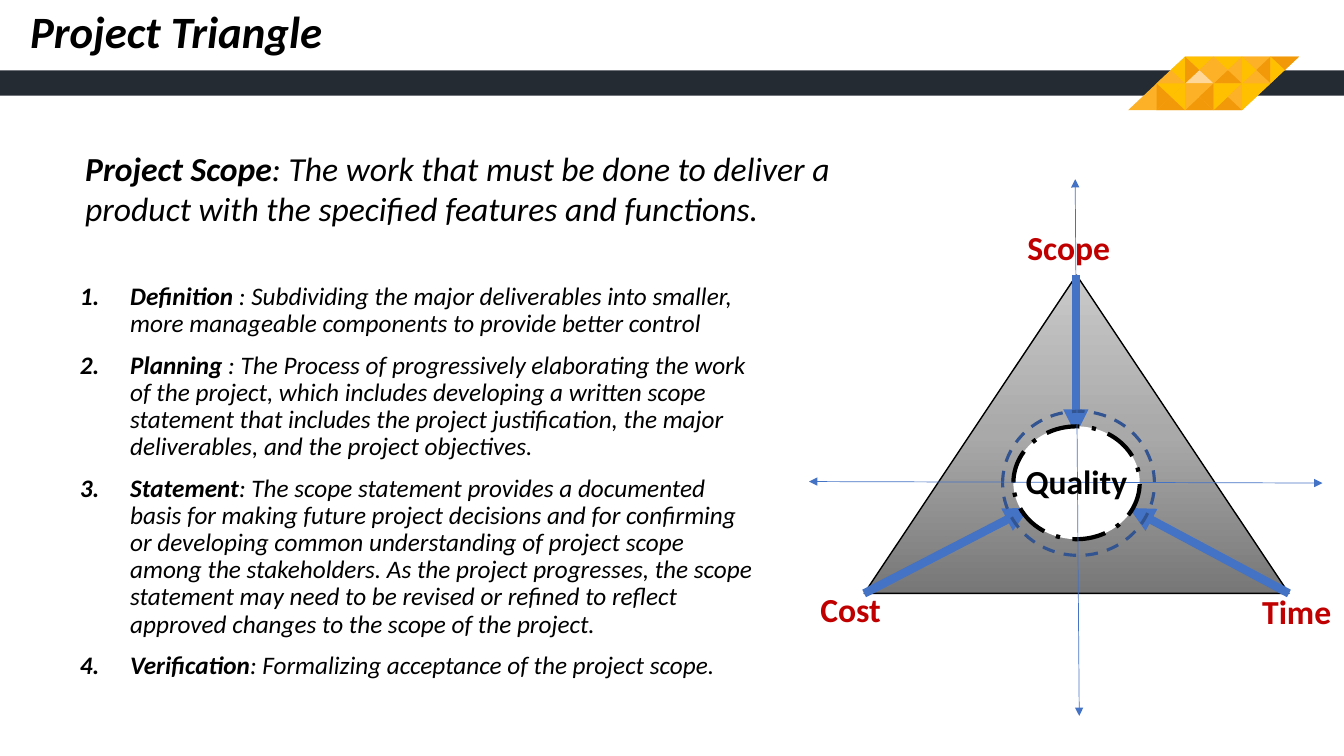
"""Build the Project Triangle slide: scope definitions beside a scope, cost and time triangle."""
from copy import deepcopy

from lxml import etree
from pptx import Presentation
from pptx.dml.color import RGBColor
from pptx.enum.dml import MSO_LINE
from pptx.enum.shapes import MSO_CONNECTOR, MSO_SHAPE
from pptx.enum.text import MSO_ANCHOR, MSO_AUTO_SIZE, PP_ALIGN
from pptx.oxml.ns import qn
from pptx.util import Inches, Pt

STRAIGHT = MSO_CONNECTOR.STRAIGHT
TRIANGLE, OVAL = MSO_SHAPE.ISOSCELES_TRIANGLE, MSO_SHAPE.OVAL
DASH, LONG_DASH_DOT = MSO_LINE.DASH, MSO_LINE.LONG_DASH_DOT
MIDDLE, CENTER, LEFT = MSO_ANCHOR.MIDDLE, PP_ALIGN.CENTER, PP_ALIGN.LEFT
FIT_SHAPE = MSO_AUTO_SIZE.SHAPE_TO_FIT_TEXT

THEME = {
    "font": "Calibri", "title": Pt(32), "lead": Pt(24), "body": Pt(18),
    "ink": RGBColor.from_string("000000"), "paper": RGBColor.from_string("FFFFFF"),
    "band": RGBColor.from_string("252B33"), "label": RGBColor.from_string("C00000"),
    "arrow": RGBColor.from_string("4472C4"), "ring": RGBColor.from_string("325491"),
    "greys": [RGBColor.from_string(grey) for grey in ("777777", "A9A9A9", "C9C9C9")],
    "Y": RGBColor.from_string("FFC000"), "A": RGBColor.from_string("FDB127"),
    "O": RGBColor.from_string("F2990A"), "P": RGBColor.from_string("FFD899"),
}

deck = Presentation()
deck.slide_width, deck.slide_height = Inches(13.33), Inches(7.5)
COL, ROW = deck.slide_width / 100, deck.slide_height / 100
slide = deck.slides.add_slide(deck.slide_layouts[6])
shapes = slide.shapes


def cells(*lengths):
    """Turn alternating column and row counts into slide lengths."""
    return [round(length * (ROW if i % 2 else COL)) for i, length in enumerate(lengths)]


def write(place, size, color, parts, italic=False, align=LEFT):
    """Add a text box whose first part is bold and return its frame."""
    frame = shapes.add_textbox(*cells(*place)).text_frame
    frame.word_wrap = True
    paragraph = frame.paragraphs[0]
    paragraph.alignment = align
    font = paragraph.font
    font.name, font.size, font.italic = THEME["font"], size, italic
    font.color.rgb = color
    for i, part in enumerate(parts):
        run = paragraph.add_run()
        run.text, run.font.bold = part, i == 0
    return frame


band = shapes.add_shape(MSO_SHAPE.RECTANGLE, *cells(0, 9.33, 100, 3.33))
band.shadow.inherit = False
band.fill.solid()
band.fill.fore_color.rgb = THEME["band"]
band.line.fill.background()

MOSAIC_ROWS = (("-YA-", "YAPO", "YAOA", "AOAY", "O--Y"),
               ("YYOO", "AOOA", "YAOY", "Y--Y"))
facets = [("A", [(2, 0), (-2, 4), (6, 4), (10, 0)])]
for row, tiles in enumerate(MOSAIC_ROWS):
    for column, tile in enumerate(tiles):
        x, y = 2 * column, 2 * row
        corners = [(x, y), (x + 2, y), (x + 2, y + 2), (x, y + 2)]
        for side, tone in enumerate(tile):
            if tone != "-":
                facets.append((tone, [corners[side], corners[(side + 1) % 4], (x + 1, y + 1)]))
for tone, outline in facets:
    points = [cells(86.05 + 1.06 * x, 7.5 + 1.77 * y) for x, y in outline]
    builder = shapes.build_freeform(*points[0])
    builder.add_line_segments(points[1:], close=True)
    facet = builder.convert_to_shape()
    facet.shadow.inherit = False
    facet.fill.solid()
    facet.fill.fore_color.rgb = THEME[tone]
    facet.line.fill.background()

title = write((1.5, 0, 86.27, 9.07), THEME["title"], THEME["ink"], ["Project Triangle"], True)
title.vertical_anchor = MIDDLE
title.paragraphs[0].line_spacing = 0.9

triangle = shapes.add_shape(TRIANGLE, *cells(64.3, 36.4, 31.6, 42.1))
triangle.shadow.inherit = False
triangle.fill.gradient()
triangle.fill.gradient_angle = 90
stop_list = triangle._element.spPr.find(".//" + qn("a:gsLst"))
stop_list.append(deepcopy(stop_list[0]))
for i, (stop, grey) in enumerate(zip(triangle.fill.gradient_stops, THEME["greys"])):
    stop.position, stop.color.rgb = i / 2, grey
triangle.line.color.rgb, triangle.line.width = THEME["ink"], Pt(1)

FORCES = [(80.05, 36.4, 80.05, 57.5), (64.3, 78.5, 76.6, 67.2), (95.9, 78.5, 84.02, 67.2)]
AXES = [(60.2, 63.7, 98.4, 63.9), (80, 23.7, 80.3, 94.7)]
RINGS = [((74.6, 54.4, 11.3, 19.07), None, "ring", 2.25, DASH),
         ((75.4, 56.4, 9.4, 14.93), "paper", "ink", 3, LONG_DASH_DOT)]
for arrows, weight, ends in ((FORCES, 6, ["a:tailEnd"]), (AXES, 0.5, ["a:headEnd", "a:tailEnd"])):
    if arrows is AXES:
        for place, fill, outline, width, dash in RINGS:
            ring = shapes.add_shape(OVAL, *cells(*place))
            ring.shadow.inherit = False
            if fill:
                ring.fill.solid()
                ring.fill.fore_color.rgb = THEME[fill]
            else:
                ring.fill.background()
            ring.line.color.rgb, ring.line.width = THEME[outline], Pt(width)
            ring.line.dash_style = dash
    for course in arrows:
        arrow = shapes.add_connector(STRAIGHT, *cells(*course))
        arrow.line.color.rgb, arrow.line.width = THEME["arrow"], Pt(weight)
        for end in ends:
            etree.SubElement(arrow.line._get_or_add_ln(), qn(end), type="triangle")
        etree.SubElement(arrow._element.spPr, qn("a:effectLst"))

for corner, left, top, width in (("Scope", 75.7, 29.3, 9.38), ("Time", 93.17, 77.5, 7.2),
                                 ("Cost", 60.3, 77.3, 6.98)):
    label = write((left, top, width, 6.67), THEME["lead"], THEME["label"], [corner])
    label.word_wrap, label.auto_size = False, FIT_SHAPE
write((71.6, 60.3, 17, 6.67), THEME["lead"], THEME["ink"], ["Quality"], align=CENTER)

write((5.6, 18.9, 62.8, 12.1), THEME["lead"], THEME["ink"], [
    "Project Scope",
    ": The work that must be done to deliver a product with the specified features and functions.",
], True)

STEPS = [
    ("Definition", " : Subdividing the major deliverables into smaller, more manageable components "
     "to provide better control"),
    ("Planning", " : The Process of progressively elaborating the work of the project, which "
     "includes developing a written scope statement that includes the project justification, "
     "the major deliverables, and the project objectives."),
    ("Statement", ": The scope statement provides a documented basis for making future project "
     "decisions and for confirming or developing common understanding of project scope among the "
     "stakeholders. As the project progresses, the scope statement may need to be revised or "
     "refined to reflect approved changes to the scope of the project."),
    ("Verification", ": Formalizing acceptance of the project scope."),
]
steps = shapes.add_textbox(*cells(5.2, 36.9, 52.1, 56.8)).text_frame
steps.word_wrap = True
for i, parts in enumerate(STEPS):
    step = steps.add_paragraph() if i else steps.paragraphs[0]
    step.line_spacing, step.space_before = 0.9, Pt(10 if i else 0)
    properties = step._p.get_or_add_pPr()
    properties.set("marL", str(Inches(0.5)))
    properties.set("indent", str(-Inches(0.5)))
    etree.SubElement(properties, qn("a:buFont"), typeface="+mj-lt")
    etree.SubElement(properties, qn("a:buAutoNum"), type="arabicPeriod")
    step.font.name, step.font.size, step.font.italic = THEME["font"], THEME["body"], True
    step.font.color.rgb = THEME["ink"]
    for j, part in enumerate(parts):
        run = step.add_run()
        run.text, run.font.bold = part, j == 0

deck.save("out.pptx")
